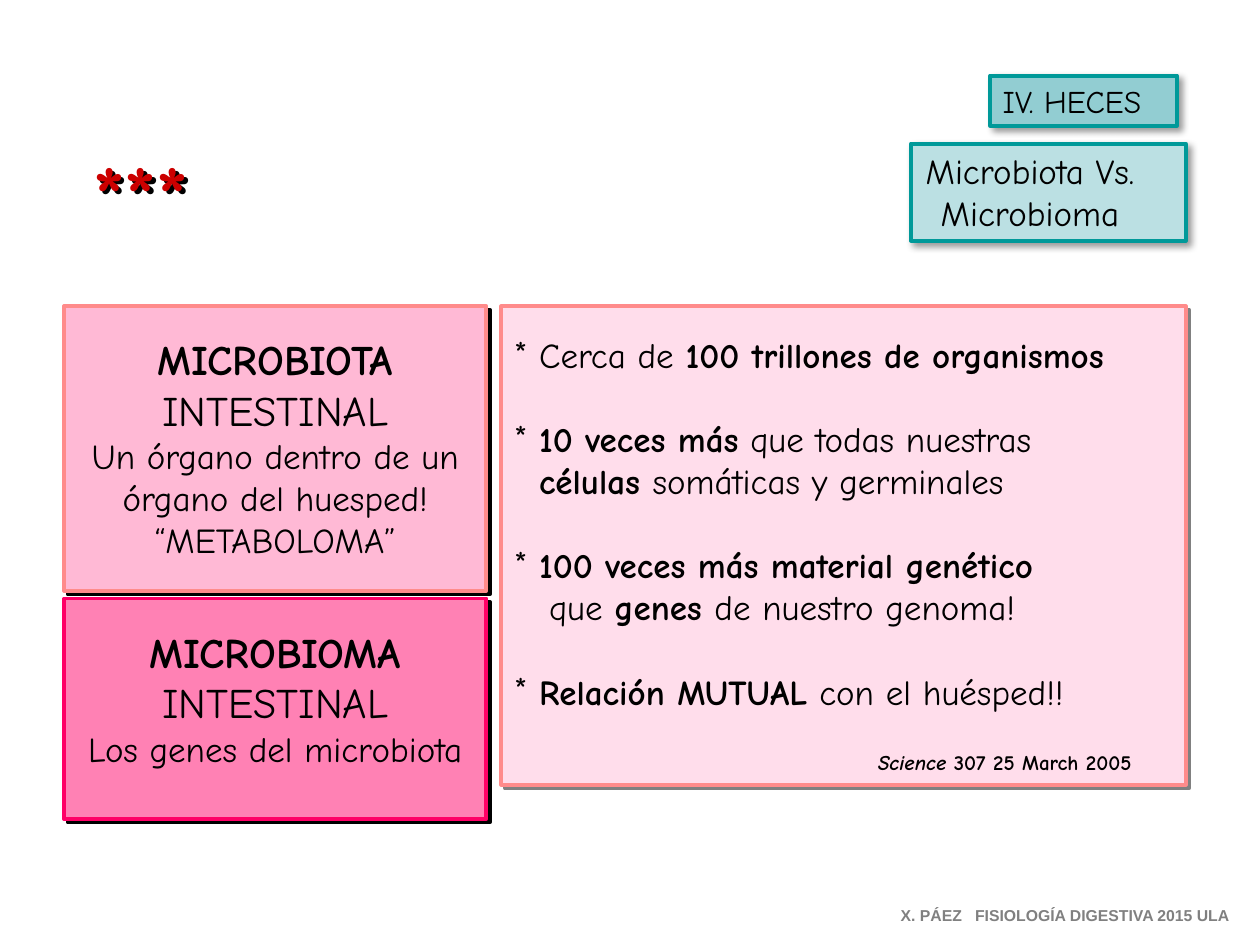
from dataclasses import dataclass

from lxml import etree
from pptx import Presentation
from pptx.dml.color import RGBColor
from pptx.enum import shapes, text
from pptx.oxml.ns import qn
from pptx.util import Inches, Pt


@dataclass(frozen=True)
class Theme:
    font: str = "Comic Neue"
    foot_font: str = "Arial"
    ink: str = "000000"
    grey: str = "808080"
    red: str = "CC0000"
    teal: str = "009999"
    aqua: str = "92CDD2"
    pale_aqua: str = "BBE0E3"
    coral: str = "FF8B8B"
    rose: str = "FF0066"
    blush: str = "FFDDEB"
    pink: str = "FFB9D5"
    hot: str = "FF81B4"
    stars: int = 48
    head: int = 24
    body: int = 20
    label: int = 18
    cite: int = 12
    foot: int = 9
    edge: float = 2.25


T = Theme()
SOFT = (T.ink, 40, 4, 3)
HARD = (T.ink, 100, 0, 2.8)
DIM = (T.grey, 100, 0, 2.8)
CENTER = text.PP_ALIGN.CENTER


def cast(shape, color, alpha, blur, dist):
    """Give the shape an outer shadow falling to the lower right."""
    shape.shadow.inherit = False
    effects = shape._element.spPr.find(qn("a:effectLst"))
    outer = etree.SubElement(effects, qn("a:outerShdw"), blurRad=str(Pt(blur)),
                             dist=str(Pt(dist)), dir="2700000",
                             algn="ctr", rotWithShape="0")
    tint = etree.SubElement(outer, qn("a:srgbClr"), val=color)
    etree.SubElement(tint, qn("a:alpha"), val=str(alpha * 1000))


def place(shape, box):
    shape.left, shape.top, shape.width, shape.height = map(Inches, box)


def paint(shape, fill, line, shadow):
    shape.fill.solid()
    shape.fill.fore_color.rgb = RGBColor.from_string(fill)
    shape.line.color.rgb = RGBColor.from_string(line)
    shape.line.width = Pt(T.edge)
    cast(shape, *shadow)


def frame(shape, top=0.05, right=0.1, wrap=True):
    body = shape.text_frame
    body.auto_size = text.MSO_AUTO_SIZE.NONE
    body.word_wrap = wrap
    body.vertical_anchor = text.MSO_ANCHOR.TOP
    body.margin_left, body.margin_right = Inches(0.1), Inches(right)
    body.margin_top, body.margin_bottom = Inches(top), Inches(0.05)
    return body


def panel(slide, box, fill, line, shadow, top=0.05):
    shape = slide.shapes.add_shape(shapes.MSO_SHAPE.RECTANGLE, *map(Inches, box))
    paint(shape, fill, line, shadow)
    return frame(shape, top)


def style(font, size, color=T.ink, name=T.font, bold=None):
    font.size, font.name, font.bold = Pt(size), name, bold
    font.color.rgb = RGBColor.from_string(color)


def write(para, parts, size, align=text.PP_ALIGN.LEFT, **look):
    """Fill a paragraph from plain strings and (string, "b" or "i") pairs."""
    para.alignment = align
    style(para.font, size, **look)
    for part in parts:
        words, mark = (part, "") if isinstance(part, str) else part
        run = para.add_run()
        run.text = words
        if mark == "b":
            run.font.bold = True
        elif mark == "i":
            run.font.italic = True


def lines(body):
    """Yield the first paragraph, then new ones without end."""
    yield body.paragraphs[0]
    while True:
        yield body.add_paragraph()


def note(slide, box, parts, size, **look):
    shape = slide.shapes.add_textbox(*map(Inches, box))
    body = frame(shape, wrap=False)
    write(body.paragraphs[0], parts, size, **look)
    return shape


def title(slide, box):
    shape = slide.shapes.title
    place(shape, box)
    paint(shape, T.pale_aqua, T.teal, SOFT)
    body = frame(shape, right=0.39)
    for para, words in zip(lines(body), ("Microbiota Vs.", "Microbioma")):
        write(para, [words], T.body, CENTER)


def tag(slide, box):
    body = panel(slide, box, T.aqua, T.teal, SOFT)
    write(body.paragraphs[0], ["IV. HECES"], T.label)


def card(slide, box, fill, line, head, rows):
    paras = lines(panel(slide, box, fill, line, HARD, top=0.22))
    write(next(paras), [(head, "b"), " INTESTINAL"], T.head, CENTER)
    for row in rows:
        write(next(paras), [row], T.body, CENTER)


def indent(para, left, star):
    props = para._p.get_or_add_pPr()
    props.set("marL", str(Inches(left)))
    props.set("indent", str(-Inches(left) if star else 0))
    if star:
        etree.SubElement(props, qn("a:buFont"), typeface=T.font)
        etree.SubElement(props, qn("a:buChar"), char="*")


def facts(slide, box):
    x, y, w, h = box
    paras = lines(panel(slide, box, T.blush, T.coral, DIM, top=0.22))
    rows = [
        (True, 0.2, ["Cerca de ", ("100 trillones de organismos", "b")]),
        (True, 0.2, [("10 veces más", "b"), " que todas nuestras"]),
        (False, 0.2, [("células ", "b"), "somáticas y germinales"]),
        (True, 0.2, [("100 veces más material genético", "b")]),
        (False, 0.28, ["que ", ("genes ", "b"), "de nuestro genoma!"]),
        (True, 0.2, [("Relación MUTUAL", "b"), " con el huésped!!"]),
    ]
    for i, (star, left, parts) in enumerate(rows):
        para = next(paras)
        if star and i:
            para.space_before = Pt(1.2 * T.body)
        indent(para, left, star)
        write(para, parts, T.body)
    note(slide, (x + 2.89, y + h - 0.33, 2.52, 0.3),
         [("Science", "i"), " 307 25 March 2005"], T.cite, bold=True)


def footer(slide, box):
    shape = slide.shapes.add_textbox(*map(Inches, box))
    para = frame(shape, wrap=False).paragraphs[0]
    tabs = etree.SubElement(para._p.get_or_add_pPr(), qn("a:tabLst"))
    etree.SubElement(tabs, qn("a:tab"), pos=str(Inches(0.59)), algn="l")
    write(para, ["X. PÁEZ\tFISIOLOGÍA DIGESTIVA 2015 ULA"], T.foot,
          color=T.grey, name=T.foot_font, bold=True)


def main():
    deck = Presentation()
    deck.slide_width, deck.slide_height = Inches(10), Inches(7.5)
    slide = deck.slides.add_slide(deck.slide_layouts[5])
    left, top, wide = 0.51, 2.43, 3.35
    title(slide, (7.23, 1.14, 2.18, 0.77))
    tag(slide, (7.86, 0.6, 1.48, 0.4))
    stars = note(slide, (0.64, 1.07, 1.27, 0.91), ["***"], T.stars,
                 color=T.red, bold=True)
    cast(stars, *HARD)
    facts(slide, (3.98, top, 5.43, 3.8))
    card(slide, (left, top, wide, 2.26), T.pink, T.coral, "MICROBIOTA",
         ["Un órgano dentro de un órgano del huesped!", "“METABOLOMA”"])
    card(slide, (left, 4.75, wide, 1.75), T.hot, T.rose, "MICROBIOMA",
         ["Los genes del microbiota"])
    footer(slide, (7.05, 7.14, 2.85, 0.25))
    deck.save("out.pptx")


if __name__ == "__main__":
    main()
